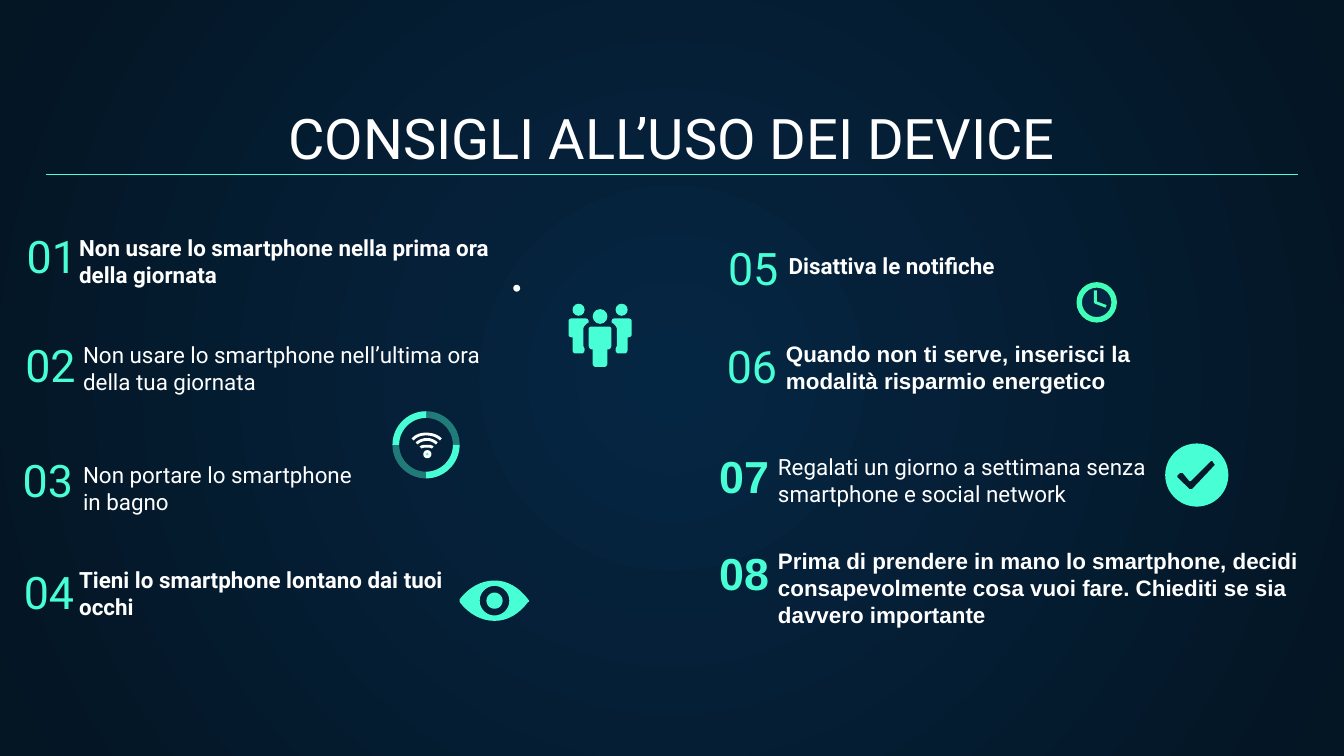
import dataclasses
import math

import lxml.etree as etree
import pptx
import pptx.dml.color
import pptx.enum.shapes
import pptx.enum.text
import pptx.oxml.ns
import pptx.util

PX = 9144  # 100 px to the inch
ALIGN = pptx.enum.text.PP_ALIGN
ANCHOR = pptx.enum.text.MSO_ANCHOR
SHAPE = pptx.enum.shapes.MSO_SHAPE
qn = pptx.oxml.ns.qn


@dataclasses.dataclass(frozen=True)
class Theme:
    center: str = "052643"
    edge: str = "041523"
    accent: str = "48FFD5"
    clock: str = "42FFB7"
    signal: str = "1EFFC1"
    white: str = "FFFFFF"
    font: str = "Roboto"
    plain_font: str = "Arial"
    title_size: int = 30
    number_size: int = 24
    body_size: int = 12
    line: float = 0.75
    icon_line: float = 1.5


def rgb(color):
    return pptx.dml.color.RGBColor.from_string(color)


def emu(px):
    return round(px * PX)


def assign(target, values):
    for name, value in values.items():
        setattr(target, name, value)


def arc(left, top, size, start=0, sweep=360):
    """Points along a circle given by its box, angles clockwise from the right."""
    radius = size / 2
    steps = sweep // 6
    angles = [math.radians(start + sweep * i / steps) for i in range(steps + 1)]
    return [(left + radius + radius * math.cos(a), top + radius + radius * math.sin(a))
            for a in angles]


def curve(*nodes):
    """Flatten nodes: (x, y) is a line end, six numbers are a cubic segment."""
    points = []
    for node in nodes:
        if len(node) == 2:
            points.append(node)
            continue
        corners = [points[-1], node[0:2], node[2:4], node[4:6]]
        for step in range(1, 9):
            t = step / 8
            weights = ((1 - t) ** 3, 3 * t * (1 - t) ** 2, 3 * t * t * (1 - t), t ** 3)
            points.append(tuple(sum(w * c[axis] for w, c in zip(weights, corners))
                                for axis in (0, 1)))
    return points


def mirror(points, axis):
    return [(2 * axis - x, y) for x, y in points]


class Deck:
    def __init__(self, theme, width):
        """Open a 16:9 presentation with one blank slide."""
        self.theme = theme
        self.presentation = pptx.Presentation()
        assign(self.presentation, {"slide_width": emu(width),
                                   "slide_height": emu(width * 9 / 16)})
        self.slide = self.presentation.slides.add_slide(self.presentation.slide_layouts[6])

    def radial_background(self):
        fill = self.slide.background.fill
        fill.gradient()
        for stop, color in zip(fill.gradient_stops, (self.theme.center, self.theme.edge)):
            stop.color.rgb = rgb(color)
        gradient = self.slide.element.find(".//" + qn("a:gradFill"))
        gradient.remove(gradient.find(qn("a:lin")))
        radial = etree.SubElement(gradient, qn("a:path"), {"path": "circle"})
        etree.SubElement(radial, qn("a:fillToRect"), dict.fromkeys("ltrb", "50000"))

    def text(self, text, box, size, color, font=None, bold=False, align=ALIGN.LEFT,
             anchor=ANCHOR.BOTTOM, inset=10, wrap=True):
        shape = self.slide.shapes.add_textbox(*map(emu, box))
        frame = shape.text_frame
        assign(frame, {"word_wrap": wrap, "vertical_anchor": anchor,
                       "margin_left": emu(10), "margin_right": emu(10),
                       "margin_top": emu(inset), "margin_bottom": emu(inset)})
        paragraph = frame.paragraphs[0]
        paragraph.alignment = align
        run = paragraph.add_run()
        run.text = text
        assign(run.font, {"name": font or self.theme.font, "bold": bold,
                          "size": pptx.util.Pt(size)})
        run.font.color.rgb = rgb(color)

    def paint(self, shape, fill, line=None, opacity=100):
        shape.shadow.inherit = False
        if fill:
            shape.fill.solid()
            shape.fill.fore_color.rgb = rgb(fill)
        else:
            shape.fill.background()
        if line:
            shape.line.color.rgb = rgb(line)
            shape.line.width = pptx.util.Pt(self.theme.icon_line)
        else:
            shape.line.fill.background()
        if opacity < 100:
            color = shape.element.find(".//" + qn("a:srgbClr"))
            etree.SubElement(color, qn("a:alpha"), {"val": str(opacity * 1000)})

    def preset(self, kind, box, fill, line=None):
        shape = self.slide.shapes.add_shape(kind, *map(emu, box))
        self.paint(shape, fill, line)
        return shape

    def outline(self, contours, fill, line=None, opacity=100):
        """Freeform of one or more contours; inner ones are holes, no fill leaves it open."""
        contours = [[(emu(x), emu(y)) for x, y in contour] for contour in contours]
        builder = self.slide.shapes.build_freeform(*contours[0][0], scale=1.0)
        for index, contour in enumerate(contours):
            if index:
                builder.move_to(*contour[0])
            builder.add_line_segments(contour[1:], close=bool(fill))
        self.paint(builder.convert_to_shape(), fill, line, opacity)

    def rule(self, left, right, y):
        connector = self.slide.shapes.add_connector(
            pptx.enum.shapes.MSO_CONNECTOR.STRAIGHT, emu(left), emu(y), emu(right), emu(y))
        connector.line.color.rgb = rgb(self.theme.accent)
        connector.line.width = pptx.util.Pt(self.theme.line)
        etree.SubElement(connector.element.find(qn("p:spPr")), qn("a:effectLst"))


def add_people(deck):
    accent = deck.theme.accent
    axis = 446.5
    side = curve((425, 237), (424, 237, 423, 238, 423, 239), (423, 249),
                 (423, 250, 424, 251, 425, 251), (426, 251), (426, 260),
                 (426, 262, 427, 263, 428, 263), (433, 263),
                 (434, 263, 435, 262, 435, 260), (435, 259, 434, 258, 434, 257), (434, 245),
                 (434, 243, 436, 241, 438, 240), (438, 239), (438, 238, 437, 237, 436, 237))
    half = curve((440, 243), (439, 243, 438, 244, 438, 245), (438, 257),
                 (438, 258, 439, 260, 440, 260), (441, 260), (441, 270),
                 (441, 272, 442, 273, 443, 273))
    for body in (side, mirror(side, axis), half + mirror(half, axis)[::-1]):
        deck.outline([body], accent)
    for left, top, size in ((426, 226, 9), (458, 226, 9), (441, 230, 11)):
        deck.preset(SHAPE.OVAL, (left, top, size, size), accent)


def add_eye(deck):
    lens = curve((342, 446), (349, 437, 358, 432, 368, 432), (378, 432, 386, 437, 393, 446),
                 (394, 447, 394, 448, 393, 448), (386, 457, 378, 462, 368, 462),
                 (358, 462, 349, 457, 342, 448), (342, 448, 342, 447, 342, 446))
    deck.outline([lens, arc(357, 436, 22), arc(362, 441, 12)], deck.theme.accent)


def add_check(deck):
    tick = [(902, 343), (904, 346), (887, 364), (885, 364), (876, 355), (876, 354),
            (878, 352), (880, 352), (885, 358), (886, 358), (901, 343)]
    deck.outline([arc(867, 330, 47), tick], deck.theme.accent)


def add_signal(deck):
    theme = deck.theme
    for quarter, opacity in enumerate((100, 41, 100, 41)):
        start = 90 * quarter
        ring = arc(292, 306, 50, start, 90) + arc(297, 311, 40, start, 90)[::-1]
        deck.outline([ring], theme.accent, opacity=opacity)
    deck.preset(SHAPE.OVAL, (316, 336, 4, 4), theme.signal, theme.white)
    waves = (((307, 327), (310, 324, 313, 323, 317, 323), (321, 323, 325, 324, 328, 327)),
             ((310, 330), (312, 328, 315, 327, 318, 327), (320, 327, 323, 328, 325, 330)),
             ((313, 333), (314, 332, 316, 332, 318, 332), (319, 332, 321, 332, 322, 333)))
    for wave in waves:
        deck.outline([curve(*wave)], None, theme.white)


def add_clock(deck):
    theme = deck.theme
    rim = deck.preset(SHAPE.DONUT, (802, 211, 28, 28), theme.accent, theme.clock)
    rim.adjustments[0] = 0.07
    deck.preset(SHAPE.OVAL, (804, 213, 24, 24), theme.center, theme.clock)
    deck.outline([[(815, 216), (815, 225), (823, 228)]], None, theme.clock)


def main():
    theme = Theme()
    deck = Deck(theme, 1000)
    deck.radial_background()
    deck.text("CONSIGLI ALL’USO DEI DEVICE", (34, 71, 932, 66), theme.title_size,
              theme.white, align=ALIGN.CENTER)
    deck.rule(34, 966, 130)

    plain = {"font": theme.plain_font, "bold": True, "anchor": ANCHOR.TOP, "inset": 5}
    plain_number = plain | {"align": ALIGN.RIGHT, "wrap": False}
    right = {"align": ALIGN.RIGHT}
    bold = {"bold": True}
    tips = [
        ((10, 154, 129, 66), {}, (49, 203, 339, 21), bold,
         "Non usare lo smartphone nella prima ora della giornata"),
        ((9, 235, 129, 66), {}, (52, 283, 333, 21), {},
         "Non usare lo smartphone nell’ultima ora della tua giornata"),
        ((7, 321, 129, 66), {}, (52, 372, 227, 21), {},
         "Non portare lo smartphone in bagno"),
        ((-64, 404, 129, 66), right, (49, 442, 308, 29), bold,
         "Tieni lo smartphone lontano dai tuoi occhi"),
        ((460, 163, 129, 66), right, (577, 191, 336, 27), bold,
         "Disattiva le notifiche"),
        ((459, 236, 129, 66), right, (575, 248, 333, 50), plain,
         "Quando non ti serve, inserisci la modalità risparmio energetico"),
        ((524, 329, 58, 50), plain_number, (569, 358, 298, 29), {},
         "Regalati un giorno a settimana senza smartphone e social network"),
        ((524, 401, 58, 50), plain_number, (569, 402, 466, 71), plain,
         "Prima di prendere in mano lo smartphone, decidi consapevolmente cosa vuoi fare. "
         "Chiediti se sia davvero importante"),
    ]
    for number, (number_box, number_style, tip_box, tip_style, tip) in enumerate(tips, 1):
        deck.text(f"{number:02}", number_box, theme.number_size, theme.accent, **number_style)
        deck.text(tip, tip_box, theme.body_size, theme.white, **tip_style)

    for add_icon in (add_check, add_people, add_eye, add_signal, add_clock):
        add_icon(deck)
    deck.preset(SHAPE.OVAL, (383, 213, 3, 3), theme.white, theme.white)
    deck.presentation.save("out.pptx")


if __name__ == "__main__":
    main()
